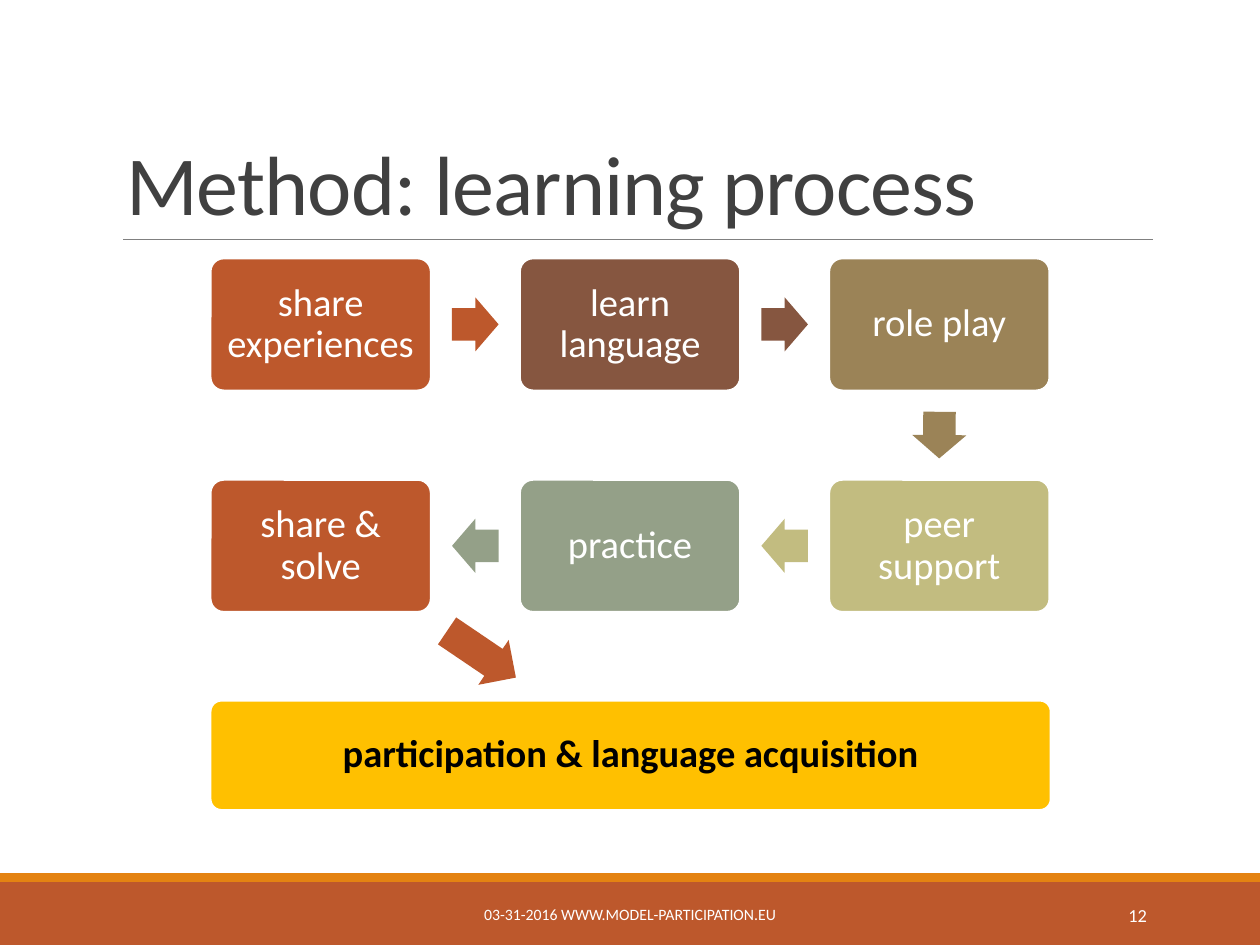
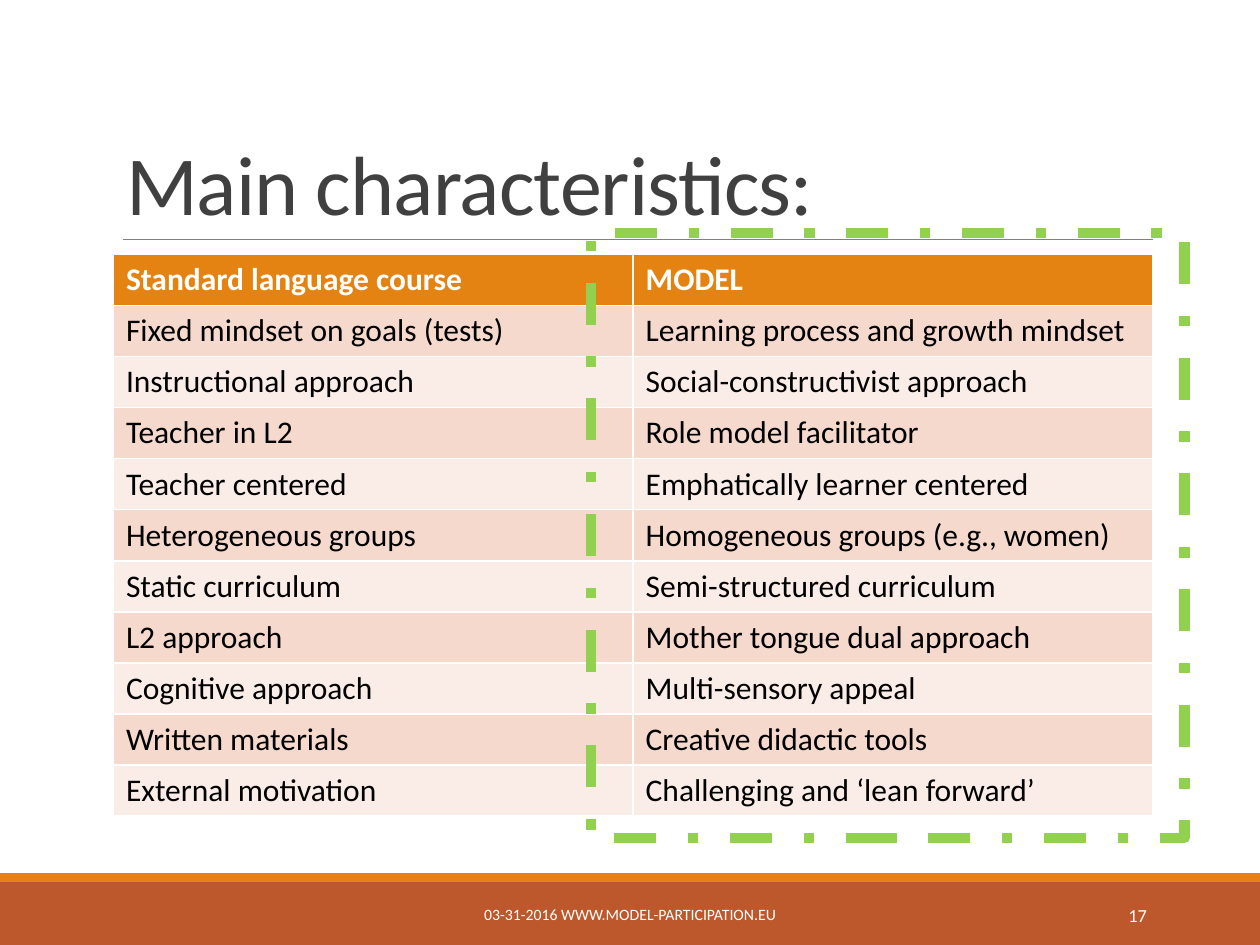
"""Build two training slides: a learning process diagram and a course comparison table."""
from dataclasses import dataclass
from typing import Any

import pptx
import pptx.dml.color
import pptx.enum.dml
import pptx.enum.shapes
import pptx.enum.text
import pptx.oxml.ns
import pptx.oxml.xmlchemy
import pptx.util
from lxml import etree

COLORS = {
    "white": "FFFFFF", "black": "000000", "title": "404040", "rule": "808080",
    "rust": "BD582C", "orange": "E48312", "brown": "865640", "tan": "9B8357",
    "khaki": "C2BC80", "sage": "94A088", "gold": "FFC000", "green": "92D050",
    "row_dark": "F5D9CC", "row_light": "FAEDE7",
}
FONT = "Calibri"
FOOTER = "03-31-2016 WWW.MODEL-PARTICIPATION.EU"
GRID_COLUMNS, GRID_ROWS = 100, 75
CELL = pptx.util.Inches(0.1)
SHAPES = pptx.enum.shapes.MSO_SHAPE
ALIGN = pptx.enum.text.PP_ALIGN
ANCHOR = pptx.enum.text.MSO_ANCHOR


@dataclass(frozen=True)
class Frame:
    """A rectangle in grid columns and rows."""
    left: float
    top: float
    width: float
    height: float

    def lengths(self) -> tuple[int, ...]:
        """Return left, top, width and height as slide lengths."""
        return tuple(round(value * CELL) for value in
                     (self.left, self.top, self.width, self.height))


@dataclass(frozen=True)
class Stage:
    """A step of the process and the arrow that leaves it."""
    text: str
    color: str
    column: int
    row: int
    arrow_column: float
    arrow_row: float
    rotation: float
    arrow_length: float = 3.7


TITLE_FRAME = Frame(9, 3.1, 82.5, 15.9)
FIRST_STAGE = Frame(16.7, 20.5, 17.5, 10.5)
COLUMN_PITCH, ROW_PITCH = 24.55, 17.57
ARROW_HEIGHT = 4.3
RESULT_FRAME = Frame(16.7, 55.6, 66.7, 8.7)
TABLE_FRAME = Frame(9, 20.2, 82.5, 44.6)
HIGHLIGHT_FRAME = Frame(46.9, 18.5, 47.1, 48)

STAGES = (
    Stage("share experiences", "rust", 0, 0, 0.5, 0, 0),
    Stage("learn language", "brown", 1, 0, 1.5, 0, 0),
    Stage("role play", "tan", 2, 0, 2, 0.5, 90.4),
    Stage("peer support", "khaki", 2, 1, 1.5, 1, 180),
    Stage("practice", "sage", 1, 1, 0.5, 1, 180),
    Stage("share & solve", "rust", 0, 1, 0.52, 1.49, 34.1, 6.6),
)
COMPARISON = (
    ("Standard language course", "MODEL"),
    ("Fixed mindset on goals (tests)", "Learning process and growth mindset"),
    ("Instructional approach", "Social-constructivist approach"),
    ("Teacher in L2", "Role model facilitator"),
    ("Teacher centered", "Emphatically learner centered"),
    ("Heterogeneous groups", "Homogeneous groups (e.g., women)"),
    ("Static curriculum", "Semi-structured curriculum"),
    ("L2 approach", "Mother tongue dual approach"),
    ("Cognitive approach", "Multi-sensory appeal"),
    ("Written materials", "Creative didactic tools"),
    ("External motivation", "Challenging and ‘lean forward’"),
)


def rgb(name: str) -> pptx.dml.color.RGBColor:
    """Look up a colour by name."""
    return pptx.dml.color.RGBColor.from_string(COLORS[name])


def write(text_frame: Any, text: str, size: float, color: str, bold: bool = False,
          align: Any = ALIGN.LEFT, spacing: float = 1.0) -> Any:
    """Fill a text frame with one formatted paragraph and return it."""
    text_frame.word_wrap = True
    para = text_frame.paragraphs[0]
    para.text = text
    para.alignment = align
    para.line_spacing = spacing
    para.font.name = FONT
    para.font.size = pptx.util.Pt(size)
    para.font.bold = bold
    para.font.color.rgb = rgb(color)
    return para


def add_block(page: Any, kind: Any, frame: Frame, color: str) -> Any:
    """Add a filled preset shape without outline or shadow."""
    block = page.shapes.add_shape(kind, *frame.lengths())
    block.shadow.inherit = False
    block.fill.solid()
    block.fill.fore_color.rgb = rgb(color)
    block.line.fill.background()
    return block


def add_label(page: Any, frame: Frame, text: str, size: float, align: Any) -> None:
    """Add a white footer label."""
    box = page.shapes.add_textbox(*frame.lengths())
    box.text_frame.vertical_anchor = ANCHOR.MIDDLE
    write(box.text_frame, text, size, "white", align=align)


def add_page(deck: Any, title: str, number: int) -> Any:
    """Add a slide with title, rule, bands and footer."""
    page = deck.slides.add_slide(deck.slide_layouts[5])
    heading = page.shapes.title
    heading.left, heading.top, heading.width, heading.height = TITLE_FRAME.lengths()
    heading.text_frame.auto_size = pptx.enum.text.MSO_AUTO_SIZE.NONE
    heading.text_frame.vertical_anchor = ANCHOR.BOTTOM
    para = write(heading.text_frame, title, 48, "title", spacing=0.85)
    para.runs[0]._r.get_or_add_rPr().set("spc", "-50")

    add_block(page, SHAPES.RECTANGLE, Frame(0, 70, GRID_COLUMNS, 5), "rust")
    add_block(page, SHAPES.RECTANGLE, Frame(0, 69.3, GRID_COLUMNS, 0.7), "orange")
    start_x, start_y, end_x, end_y = Frame(9.8, 19, 91.5, 19).lengths()
    rule = page.shapes.add_connector(
        pptx.enum.shapes.MSO_CONNECTOR.STRAIGHT, start_x, start_y, end_x, end_y)
    rule.line.color.rgb = rgb("rule")
    rule.line.width = pptx.util.Pt(0.5)
    etree.SubElement(rule._element.spPr, pptx.oxml.ns.qn("a:effectLst"))

    add_label(page, Frame(30.2, 70.6, 39.6, 4), FOOTER, 9, ALIGN.CENTER)
    add_label(page, Frame(81.2, 70.6, 10.8, 4), str(number), 10.5, ALIGN.RIGHT)
    return page


def add_card(page: Any, frame: Frame, text: str, fill: str,
             color: str = "white", bold: bool = False) -> None:
    """Add a rounded card with centred text."""
    card = add_block(page, SHAPES.ROUNDED_RECTANGLE, frame, fill)
    card.adjustments[0] = 0.1
    card.line.color.rgb = rgb("white")
    card.line.width = pptx.util.Pt(1.25)
    body = card.text_frame
    body.margin_left = body.margin_right = pptx.util.Inches(0.09)
    body.margin_top = body.margin_bottom = pptx.util.Inches(0.09)
    body.vertical_anchor = ANCHOR.MIDDLE
    write(body, text, 22, color, bold, ALIGN.CENTER, 0.9)


def add_stage(page: Any, stage: Stage) -> None:
    """Add a stage card and its outgoing arrow."""
    first = FIRST_STAGE
    add_card(page, Frame(first.left + stage.column * COLUMN_PITCH,
                         first.top + stage.row * ROW_PITCH,
                         first.width, first.height), stage.text, stage.color)
    center_x = first.left + first.width / 2 + stage.arrow_column * COLUMN_PITCH
    center_y = first.top + first.height / 2 + stage.arrow_row * ROW_PITCH
    arrow = add_block(page, SHAPES.RIGHT_ARROW,
                      Frame(center_x - stage.arrow_length / 2,
                            center_y - ARROW_HEIGHT / 2,
                            stage.arrow_length, ARROW_HEIGHT), stage.color)
    arrow.adjustments[0] = 0.6
    arrow.adjustments[1] = 0.5
    arrow.rotation = stage.rotation


def add_comparison(page: Any) -> None:
    """Add the comparison table."""
    table = page.shapes.add_table(
        len(COMPARISON), len(COMPARISON[0]), *TABLE_FRAME.lengths()).table
    for index, texts in enumerate(COMPARISON):
        is_header = index == 0
        fill = "orange" if is_header else "row_dark" if index % 2 else "row_light"
        for cell, text in zip(table.rows[index].cells, texts):
            cell.fill.solid()
            cell.fill.fore_color.rgb = rgb(fill)
            write(cell.text_frame, text, 18, "white" if is_header else "black", is_header)


def add_highlight(page: Any) -> None:
    """Add the dashed frame around the right column."""
    highlight = add_block(page, SHAPES.RECTANGLE, HIGHLIGHT_FRAME, "white")
    highlight.fill.background()
    highlight.line.color.rgb = rgb("green")
    highlight.line.width = pptx.util.Pt(6)
    highlight.line.dash_style = pptx.enum.dml.MSO_LINE.DASH_DOT


def main() -> None:
    """Build and save the deck."""
    deck = pptx.Presentation()
    deck.slide_width = GRID_COLUMNS * CELL
    deck.slide_height = GRID_ROWS * CELL

    process = add_page(deck, "Method: learning process", 12)
    for stage in STAGES:
        add_stage(process, stage)
    add_card(process, RESULT_FRAME, "participation & language acquisition",
             "gold", "black", True)

    characteristics = add_page(deck, "Main characteristics:", 17)
    add_comparison(characteristics)
    add_highlight(characteristics)
    deck.save("out.pptx")


if __name__ == "__main__":
    main()
